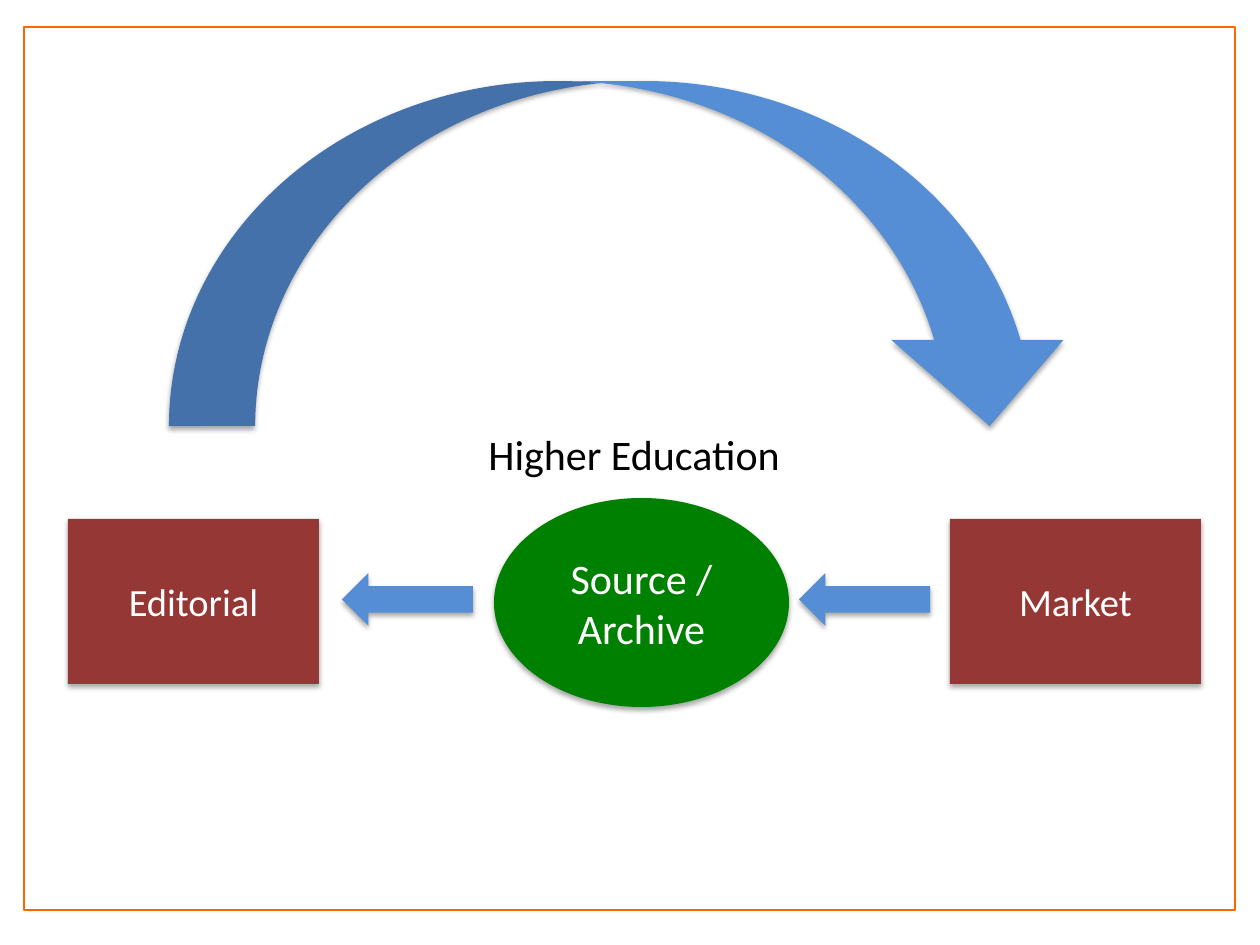
import pptx
import pptx.util
import pptx.dml.color
import pptx.enum.shapes
import pptx.enum.text
import pptx.oxml
import pptx.oxml.ns

KIND = pptx.enum.shapes.MSO_SHAPE
ALIGN = pptx.enum.text.PP_ALIGN
MID = pptx.enum.text.MSO_ANCHOR.MIDDLE
PX = 914400 // 126
COLORS = {"white": "FFFFFF", "black": "000000", "orange": "FF6600",
          "green": "008000", "red": "953735", "blue": "558ED5"}

# Content: kind, left, top, width, height, fill, text, text size
FRAME = (24, 27, 1211, 883)
PARTS = [
    (KIND.OVAL, 494, 498, 295, 209, "green", "Source / Archive", 24),
    (KIND.RECTANGLE, 68, 519, 251, 165, "red", "Editorial", 22),
    (KIND.RECTANGLE, 950, 519, 251, 165, "red", "Market", 22),
    (KIND.CURVED_DOWN_ARROW, 169, 81, 907, 345, "blue", "", 0),
    (KIND.LEFT_ARROW, 342, 573, 131, 53, "blue", "", 0),
    (KIND.LEFT_ARROW, 799, 573, 131, 53, "blue", "", 0),
]
TITLE = (476, 422, 323, 63, "Higher Education", 24)

SHADE = (
    '<a:outerShdw %s blurRad="39370" dist="22860" dir="5400000" rotWithShape="0">'
    '<a:srgbClr val="000000"><a:alpha val="35000"/></a:srgbClr></a:outerShdw>'
    % pptx.oxml.ns.nsdecls("a"))


def rgb(name):
    return pptx.dml.color.RGBColor.from_string(COLORS[name])


def emu(*box):
    return [n * PX for n in box]


def write(frame, text, size, color, align):
    frame.text = text
    para = frame.paragraphs[0]
    para.alignment = align
    font = para.runs[0].font
    font.name, font.size = "Calibri", pptx.util.Pt(size)
    font.color.rgb = rgb(color)


def draw(kind, box, fill):
    shape = slide.shapes.add_shape(kind, *emu(*box))
    shape.shadow.inherit = False
    shape.fill.solid()
    shape.fill.fore_color.rgb = rgb(fill)
    shape.line.fill.background()
    return shape


deck = pptx.Presentation()
deck.slide_width, deck.slide_height = emu(1260, 945)
slide = deck.slides.add_slide(deck.slide_layouts[6])

# Page frame
frame = draw(KIND.RECTANGLE, FRAME, "white")
frame.line.color.rgb = rgb("orange")
frame.line.width = pptx.util.Pt(1)

# Boxes and arrows, each with a soft shadow
for kind, left, top, wide, high, fill, text, size in PARTS:
    shape = draw(kind, (left, top, wide, high), fill)
    effects = shape._element.spPr.find(pptx.oxml.ns.qn("a:effectLst"))
    effects.append(pptx.oxml.parse_xml(SHADE))
    if text:
        shape.text_frame.word_wrap = True
        shape.text_frame.vertical_anchor = MID
        write(shape.text_frame, text, size, "white", ALIGN.CENTER)

# Heading above the ellipse
*box, text, size = TITLE
label = slide.shapes.add_textbox(*emu(*box))
write(label.text_frame, text, size, "black", ALIGN.LEFT)

deck.save("out.pptx")
